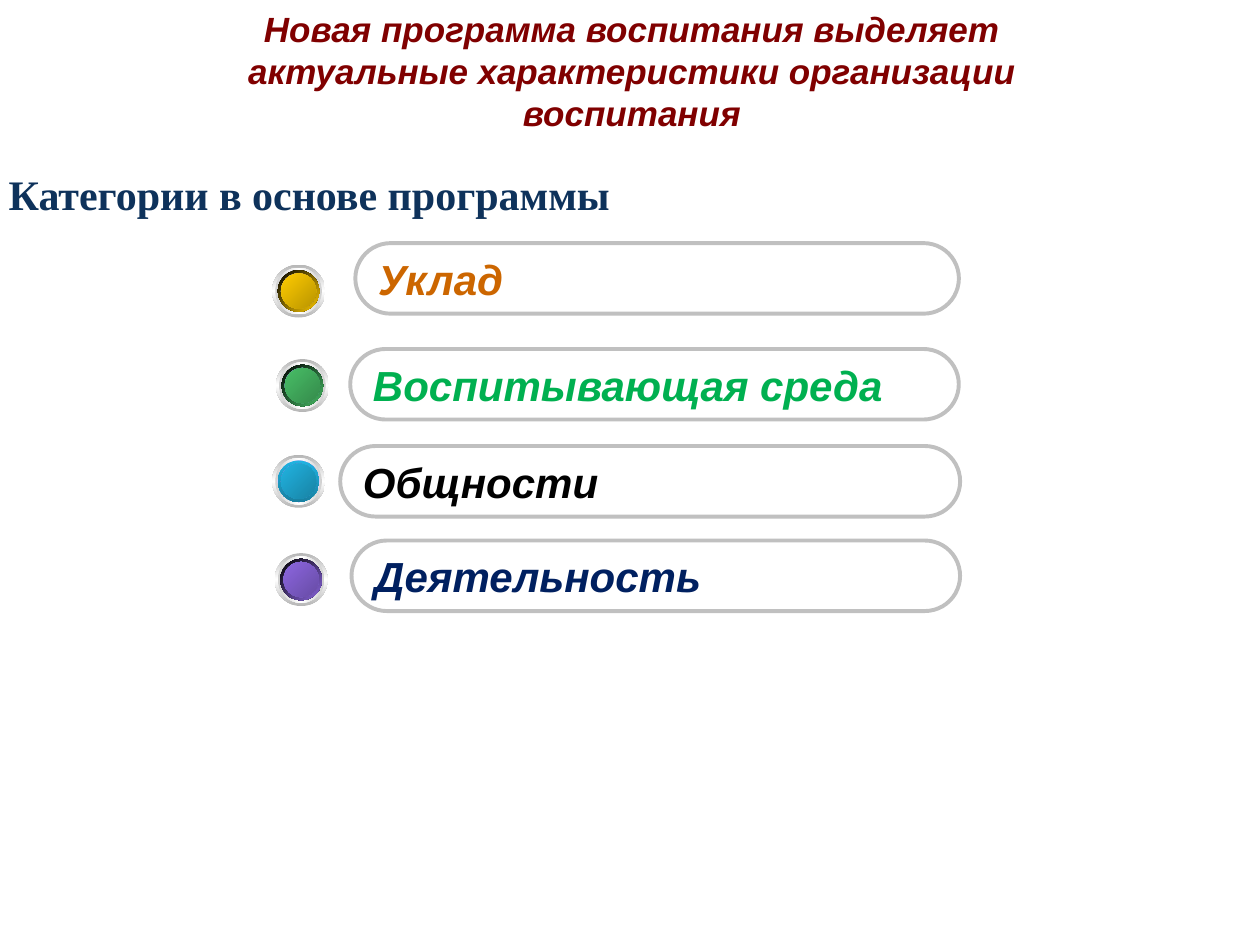
from lxml import etree
from pptx import Presentation
from pptx.dml.color import RGBColor
from pptx.enum import shapes, text
from pptx.oxml.ns import qn
from pptx.util import Inches, Pt

WHITE = RGBColor(0xFF, 0xFF, 0xFF)
SILVER = RGBColor(0xC0, 0xC0, 0xC0)
MAROON = RGBColor(0x80, 0x00, 0x00)
NAVY = RGBColor(0x0E, 0x32, 0x5B)
ORANGE = RGBColor(0xCC, 0x66, 0x00)
GREEN = RGBColor(0x00, 0xB0, 0x50)
BLACK = RGBColor(0x00, 0x00, 0x00)
DARK_BLUE = RGBColor(0x00, 0x20, 0x60)

TITLE = "Новая программа воспитания выделяет актуальные характеристики организации воспитания"
HEADING = "Категории в основе программы"

# label, colour, pill (left, top, width)
PILLS = [
    ("Уклад", ORANGE, (2.82, 1.93, 4.79)),
    ("Воспитывающая среда", GREEN, (2.78, 2.77, 4.83)),
    ("Общности", BLACK, (2.7, 3.54, 4.92)),
    ("Деятельность", DARK_BLUE, (2.79, 4.29, 4.83)),
]
PILL_HEIGHT = 0.56

# left, top, rim start, light, dark, rim angle
BALLS = [
    (2.16, 2.1, "000000", "FFCC00", "BA9500", 45),
    (2.19, 2.85, "000000", "48BE67", "358B4B", 45),
    (2.16, 3.61, "21B3E1", "21B3E1", "1883A4", 90),
    (2.18, 4.39, "000000", "8D67E1", "674BA4", 45),
]
BALL_SIZE = 0.42


def style(tf, font, size, color, italic):
    for r in tf.paragraphs[0].runs:
        r.font.name = font
        r.font.size = Pt(size)
        r.font.bold = True
        r.font.italic = italic
        r.font.color.rgb = color


def set_gradient(sp, colors, angle):
    sp.fill.gradient()
    grad = sp._element.spPr.find(qn("a:gradFill"))
    for child in list(grad):
        grad.remove(child)
    stops = etree.SubElement(grad, qn("a:gsLst"))
    for i, color in enumerate(colors):
        pos = 100000 * i // (len(colors) - 1)
        gs = etree.SubElement(stops, qn("a:gs"), pos=str(pos))
        etree.SubElement(gs, qn("a:srgbClr"), val=color)
    etree.SubElement(grad, qn("a:lin"), ang=str(angle * 60000), scaled="0")


def add_pill(s, label, color, left, top, width):
    sp = s.shapes.add_shape(shapes.MSO_SHAPE.ROUNDED_RECTANGLE, Inches(left),
                            Inches(top), Inches(width), Inches(PILL_HEIGHT))
    sp.adjustments[0] = 0.5
    sp.shadow.inherit = False
    sp.fill.solid()
    sp.fill.fore_color.rgb = WHITE
    sp.line.color.rgb = SILVER
    sp.line.width = Pt(2.25)
    tf = sp.text_frame
    tf.text = label
    tf.word_wrap = False
    tf.vertical_anchor = text.MSO_ANCHOR.MIDDLE
    tf.paragraphs[0].alignment = text.PP_ALIGN.LEFT
    style(tf, "Arial", 24, color, True)


def add_ball(s, left, top, rim, light, dark, rim_angle):
    rim_dark = "1880A1" if rim == light else light
    layers = [
        (0.42, ("B6B6B6", "FFFFFF", "B6B6B6"), 90),
        (0.37, ("D1D1D1", "FFFFFF", "D1D1D1"), 0),
        (0.33, ("FFFFFF", "9999FF", "FFFFFF"), 45),
        (0.33, (rim, rim_dark), rim_angle),
        (0.28, ("7575C3", "9999FF", "7575C3"), 315),
        (0.28, (light, dark), 45),
    ]
    group = s.shapes.add_group_shape()
    for size, colors, angle in layers:
        gap = (BALL_SIZE - size) / 2
        sp = group.shapes.add_shape(shapes.MSO_SHAPE.OVAL, Inches(left + gap),
                                    Inches(top + gap), Inches(size), Inches(size))
        sp.shadow.inherit = False
        sp.line.fill.background()
        set_gradient(sp, colors, angle)


def main():
    prs = Presentation()
    prs.slide_width, prs.slide_height = Inches(10), Inches(7.5)
    s = prs.slides.add_slide(prs.slide_layouts[5])

    title = s.shapes.title
    title.left, title.top = Inches(1.14), Inches(0.03)
    title.width, title.height = Inches(7.75), Inches(1.06)
    title.fill.solid()
    title.fill.fore_color.rgb = WHITE
    tf = title.text_frame
    tf.text = TITLE
    tf.word_wrap = True
    tf.auto_size = text.MSO_AUTO_SIZE.NONE
    tf.vertical_anchor = text.MSO_ANCHOR.MIDDLE
    tf.paragraphs[0].alignment = text.PP_ALIGN.CENTER
    style(tf, "Arial", 20, MAROON, True)

    for label, color, place in reversed(PILLS):
        add_pill(s, label, color, *place)
    for ball in BALLS:
        add_ball(s, *ball)

    box = s.shapes.add_textbox(Inches(-0.48), Inches(1.26), Inches(5.72), Inches(0.54))
    box.fill.solid()
    box.fill.fore_color.rgb = WHITE
    tf = box.text_frame
    tf.text = HEADING
    tf.word_wrap = True
    tf.auto_size = text.MSO_AUTO_SIZE.SHAPE_TO_FIT_TEXT
    p = tf.paragraphs[0]
    p.line_spacing = 1.08
    p._p.get_or_add_pPr().set("marL", str(Inches(0.45)))
    style(tf, "Times New Roman", 24, NAVY, False)

    prs.save("out.pptx")


if __name__ == "__main__":
    main()
